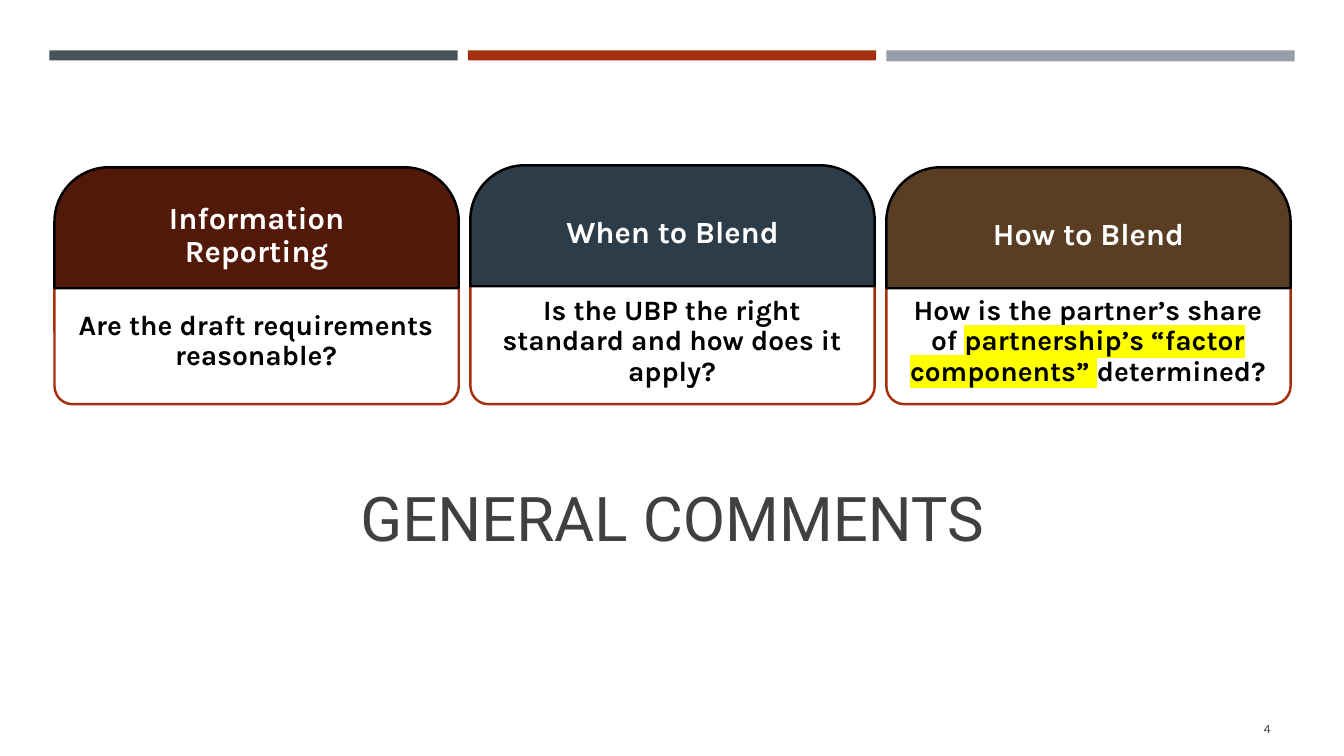
from pptx import Presentation
from pptx import util as u
from pptx.dml.color import RGBColor
from pptx.enum import shapes, text
from pptx.oxml.ns import qn
from lxml import etree

# Content: (heading, fill, top offset, [(words, highlighted)])
TITLE = "GENERAL COMMENTS"
PAGE = "4"
CARDS = [
    ("Information Reporting", "rust", 0,
     [("Are the draft requirements reasonable?", False)]),
    ("When to Blend", "navy", -0.02,
     [("Is the UBP the right standard and how does it apply?", False)]),
    ("How to Blend", "brown", 0,
     [("How is the partner’s share of ", False),
      ("partnership’s “factor components” ", True),
      ("determined?", False)]),
]
BARS = [("slate", 0.1), ("red", 0.1), ("gray", 0.11)]
HEX = dict(slate="465359", red="A5300F", gray="969FA7", rust="521808",
           navy="2C3C48", brown="593E24", ink="404040", black="000000",
           white="FFFFFF", mark="FFFF00")

# Grid, in inches
WIDE, HIGH = 13.33, 7.5
BAR_X, BAR_W, BAR_STEP, BAR_Y = 0.49, 4.05, 4.15, 0.5
CARD_X, CARD_W, CARD_STEP = 0.54, 4.01, 4.125
HEAD_Y, HEAD_H, BODY_Y, BODY_H = 1.66, 1.2, 2.82, 1.19

deck = Presentation()
deck.slide_width, deck.slide_height = u.Inches(WIDE), u.Inches(HIGH)
slide = deck.slides.add_slide(deck.slide_layouts[5])


def rgb(name):
    return RGBColor.from_string(HEX[name])


def place(box):
    return [u.Inches(n) for n in box]


def block(kind, box, fill, line=None):
    item = slide.shapes.add_shape(kind, *place(box))
    item.shadow.inherit = False
    item.fill.solid()
    item.fill.fore_color.rgb = rgb(fill)
    if line:
        item.line.color.rgb = rgb(line)
        item.line.width = u.Pt(1.75)
    else:
        item.line.fill.background()
    return item


def tab(box, fill, line, curve):
    item = block(shapes.MSO_SHAPE.ROUND_2_SAME_RECTANGLE, box, fill, line)
    item.adjustments[0], item.adjustments[1] = curve, 0
    return item


def write(item, runs, size, color, face="Karla", bold=False,
          align=text.PP_ALIGN.CENTER, inset=None, tight=None):
    frame = item.text_frame
    frame.word_wrap = True
    frame.auto_size = text.MSO_AUTO_SIZE.NONE
    frame.vertical_anchor = text.MSO_ANCHOR.MIDDLE
    if inset is not None:
        frame.margin_left = frame.margin_right = u.Inches(inset)
        frame.margin_top = frame.margin_bottom = u.Inches(inset)
    para = frame.paragraphs[0]
    para.alignment = align
    if tight:
        para.line_spacing = tight
    for words, marked in runs:
        run = para.add_run()
        run.text = words
        font = run.font
        font.size, font.bold = u.Pt(size), bold
        font.color.rgb = rgb(color)
        if marked:
            glow = etree.SubElement(font._element, qn("a:highlight"))
            etree.SubElement(glow, qn("a:srgbClr"), val=HEX["mark"])
        font.name = face


def label(box, *args, **opts):
    write(slide.shapes.add_textbox(*place(box)), *args, **opts)


# Top bars
for col, (fill, high) in enumerate(BARS):
    block(shapes.MSO_SHAPE.RECTANGLE,
          (BAR_X + col * BAR_STEP, BAR_Y, BAR_W, high), fill)

# Title
title = slide.shapes.title
title.left, title.top, title.width, title.height = place((0.64, 4.31, 12.06, 1.64))
write(title, [(TITLE, False)], 44, "ink", face="Roboto")

# Cards: body panel below, heading tab above
for col, (head, fill, shift, body) in enumerate(CARDS):
    x, y = CARD_X + col * CARD_STEP, HEAD_Y + shift
    panel = tab((x, BODY_Y, CARD_W, BODY_H), "white", "red", 0.15)
    panel.rotation = 180
    shade = panel.fill._xPr.find(qn("a:solidFill"))[0]
    etree.SubElement(shade, qn("a:alpha"), val="90000")
    label((x + 0.05, BODY_Y, 3.9, 1.14), body, 20, "black",
          bold=True, inset=0.17, tight=0.9)
    tab((x, y, CARD_W, HEAD_H), fill, "black", 0.45)
    label((x + 0.16, y + 0.16, 3.69, 1.04), [(head, False)], 22, "white",
          bold=True, inset=0.32, tight=0.9)

# Page number
label((11.55, 7.03, 1.15, 0.4), [(PAGE, False)], 9, "ink",
      align=text.PP_ALIGN.RIGHT)

deck.save("out.pptx")
